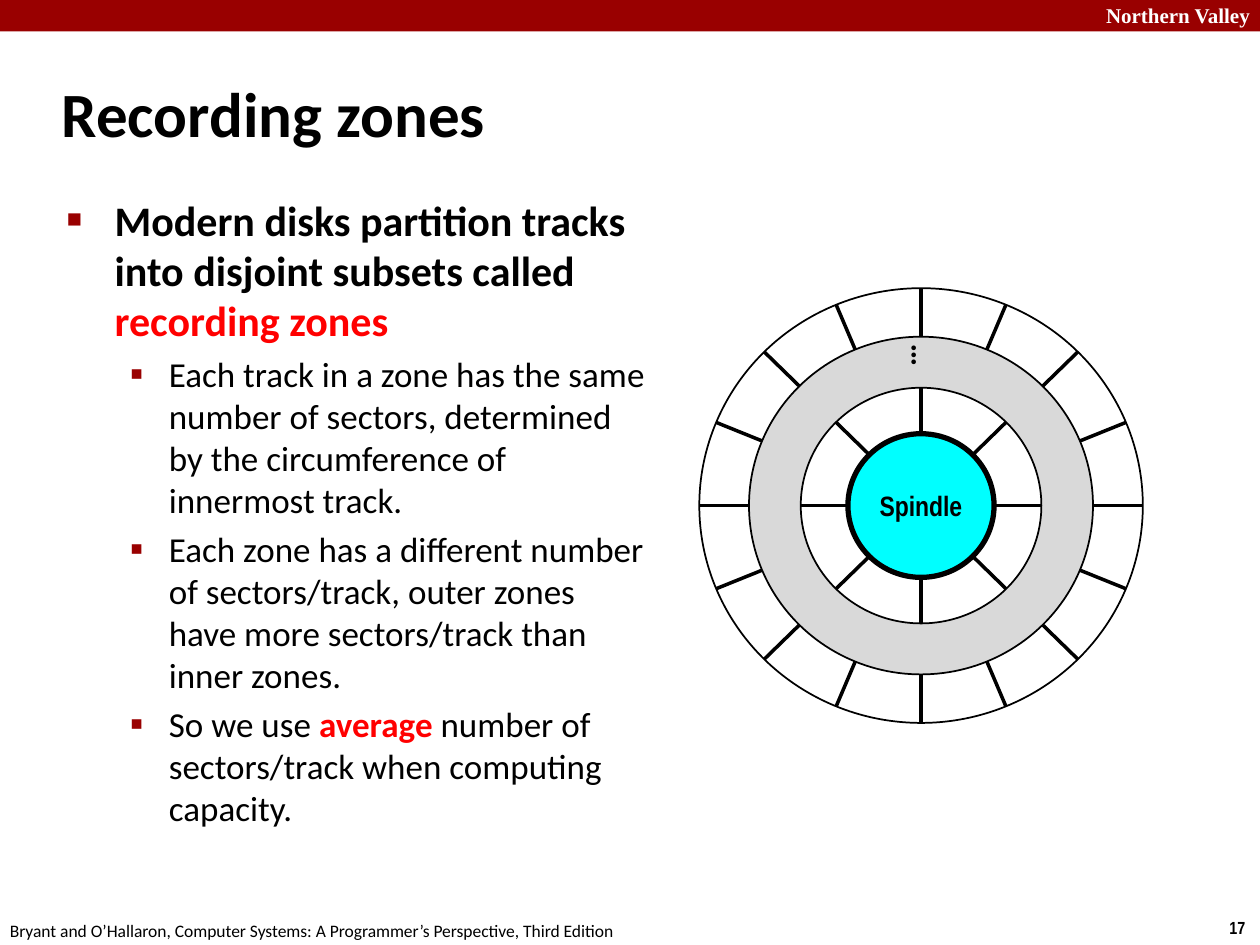
import math

import lxml.etree
import pptx
import pptx.dml.color
import pptx.enum.shapes
import pptx.enum.text
import pptx.oxml.ns
import pptx.util

COLORS = {
    "black": "000000", "white": "FFFFFF", "maroon": "990000",
    "red": "FF0000", "gray": "D9D9D9", "cyan": "00FFFF",
}
qn = pptx.oxml.ns.qn
Align = pptx.enum.text.PP_ALIGN
Anchor = pptx.enum.text.MSO_ANCHOR
Preset = pptx.enum.shapes.MSO_SHAPE

deck = pptx.Presentation()
deck.slide_width = pptx.util.Inches(10)
deck.slide_height = pptx.util.Inches(7.5)
slide = deck.slides.add_slide(deck.slide_layouts[1])
shapes = slide.shapes


def area(left, top, width, height):
    """Turn percentages of the slide's width and height into lengths."""
    across, down = deck.slide_width / 100, deck.slide_height / 100
    return [round(n) for n in (left * across, top * down, width * across, height * down)]


def write(paragraph, text, size=20, font="Calibri", color="black", bold=False):
    run = paragraph.add_run()
    run.text = text
    run.font.size = pptx.util.Pt(size)
    run.font.name = font
    run.font.bold = bold
    run.font.color.rgb = pptx.dml.color.RGBColor.from_string(COLORS[color])


# Page furniture
banner = shapes.add_shape(Preset.RECTANGLE, *area(0, 0, 100, 3.33))
banner.shadow.inherit = False
banner.fill.solid()
banner.fill.fore_color.rgb = pptx.dml.color.RGBColor.from_string(COLORS["maroon"])
banner.line.fill.background()

furniture = [
    ("Northern Valley", (82.2, -0.4, 18, 4), Align.RIGHT,
     dict(size=12, font="Times New Roman", color="white", bold=True)),
    ("17", (96.6, 96.4, 3.4, 3.6), Align.LEFT,
     dict(size=10, font="Arial Narrow", bold=True)),
    ("Bryant and O’Hallaron, Computer Systems: A Programmer’s Perspective, Third Edition",
     (-0.2, 96.67, 50.8, 3.6), Align.LEFT, dict(size=10)),
]
for text, place, alignment, style in furniture:
    label = shapes.add_textbox(*area(*place)).text_frame
    label.word_wrap = False
    label.paragraphs[0].alignment = alignment
    write(label.paragraphs[0], text, **style)

# Title
title = shapes.title
title.left, title.top, title.width, title.height = area(3.9, 6.4, 83, 11.07)
title.text_frame.auto_size = pptx.enum.text.MSO_AUTO_SIZE.NONE
title.text_frame.vertical_anchor = Anchor.MIDDLE
title.text_frame.paragraphs[0].alignment = Align.LEFT
write(title.text_frame.paragraphs[0], "Recording zones", size=36, bold=True)

# Bullet list
body = slide.placeholders[1]
body.left, body.top, body.width, body.height = area(4.3, 19.87, 48.3, 73.87)
body.text_frame.auto_size = pptx.enum.text.MSO_AUTO_SIZE.NONE
key_term = dict(color="red", bold=True)
bullets = [
    (0, [("Modern disks partition tracks into disjoint subsets called ", dict(size=24, bold=True)),
         ("recording zones", dict(size=24, **key_term))]),
    (1, [("Each track in a zone has the same number of sectors, determined by the "
          "circumference of innermost track.", {})]),
    (1, [("Each zone has a different number of sectors/track, outer zones have more "
          "sectors/track than inner zones.", {})]),
    (1, [("So we use ", {}), ("average", key_term),
         (" number of sectors/track when computing capacity.", {})]),
]
# margin and hanging indent in inches, space before in points, mark, mark size in percent
levels = [(0.38, 0.38, 4.8, "■", 60), (0.81, 0.31, 4, "▪", 110)]
for index, (level, pieces) in enumerate(bullets):
    item = body.text_frame.add_paragraph() if index else body.text_frame.paragraphs[0]
    margin, hang, before, mark, percent = levels[level]
    item.level = level
    item.space_before = pptx.util.Pt(before)
    properties = item._p.get_or_add_pPr()
    properties.set("marL", str(pptx.util.Inches(margin)))
    properties.set("indent", str(-pptx.util.Inches(hang)))
    mark_color = lxml.etree.SubElement(properties, qn("a:buClr"))
    lxml.etree.SubElement(mark_color, qn("a:srgbClr"), val=COLORS["maroon"])
    lxml.etree.SubElement(properties, qn("a:buSzPct"), val=str(percent * 1000))
    lxml.etree.SubElement(properties, qn("a:buChar"), char=mark)
    for text, style in pieces:
        write(item, text, **style)

# Disk: concentric circles, given by their horizontal and vertical radii
center_x, center_y = 73.1, 53.5
rims = {"outer": (17.6, 23), "middle": (13.65, 17.87), "inner": (9.55, 12.47), "hub": (5.8, 7.6)}
circles = [("outer", "white", 1), ("middle", "gray", 1), ("inner", "white", 1), ("hub", "cyan", 3)]
for rim, fill, weight in circles:
    rx, ry = rims[rim]
    circle = shapes.add_shape(Preset.OVAL, *area(center_x - rx, center_y - ry, 2 * rx, 2 * ry))
    circle.shadow.inherit = False
    circle.fill.solid()
    circle.fill.fore_color.rgb = pptx.dml.color.RGBColor.from_string(COLORS[fill])
    circle.line.color.rgb = pptx.dml.color.RGBColor.from_string(COLORS["black"])
    circle.line.width = pptx.util.Pt(weight)

spindle = circle.text_frame
spindle.word_wrap = False
spindle.vertical_anchor = Anchor.MIDDLE
spindle.paragraphs[0].alignment = Align.CENTER
write(spindle.paragraphs[0], "Spindle", size=16, font="Arial Narrow", bold=True)

# Sector borders, evenly spread around each zone
for far, near, sectors in [("inner", "hub", 8), ("outer", "middle", 16)]:
    for sector in range(sectors):
        angle = 2 * math.pi * sector / sectors
        ends = []
        for rx, ry in (rims[far], rims[near]):
            ends += area(center_x + rx * math.cos(angle), center_y + ry * math.sin(angle), 0, 0)[:2]
        border = shapes.add_connector(pptx.enum.shapes.MSO_CONNECTOR.STRAIGHT, *ends)
        border.line.color.rgb = pptx.dml.color.RGBColor.from_string(COLORS["black"])
        border.line.width = pptx.util.Pt(2)
        lxml.etree.SubElement(border._element.spPr, qn("a:effectLst"))

# Vertical ellipsis for the zones in between
ellipsis = shapes.add_textbox(*area(69.7, 36.4, 5, 3.73)).text_frame
ellipsis.word_wrap = False
ellipsis._txBody.bodyPr.set("vert", "vert270")
write(ellipsis.paragraphs[0], "…", size=18, bold=True)

deck.save("out.pptx")
